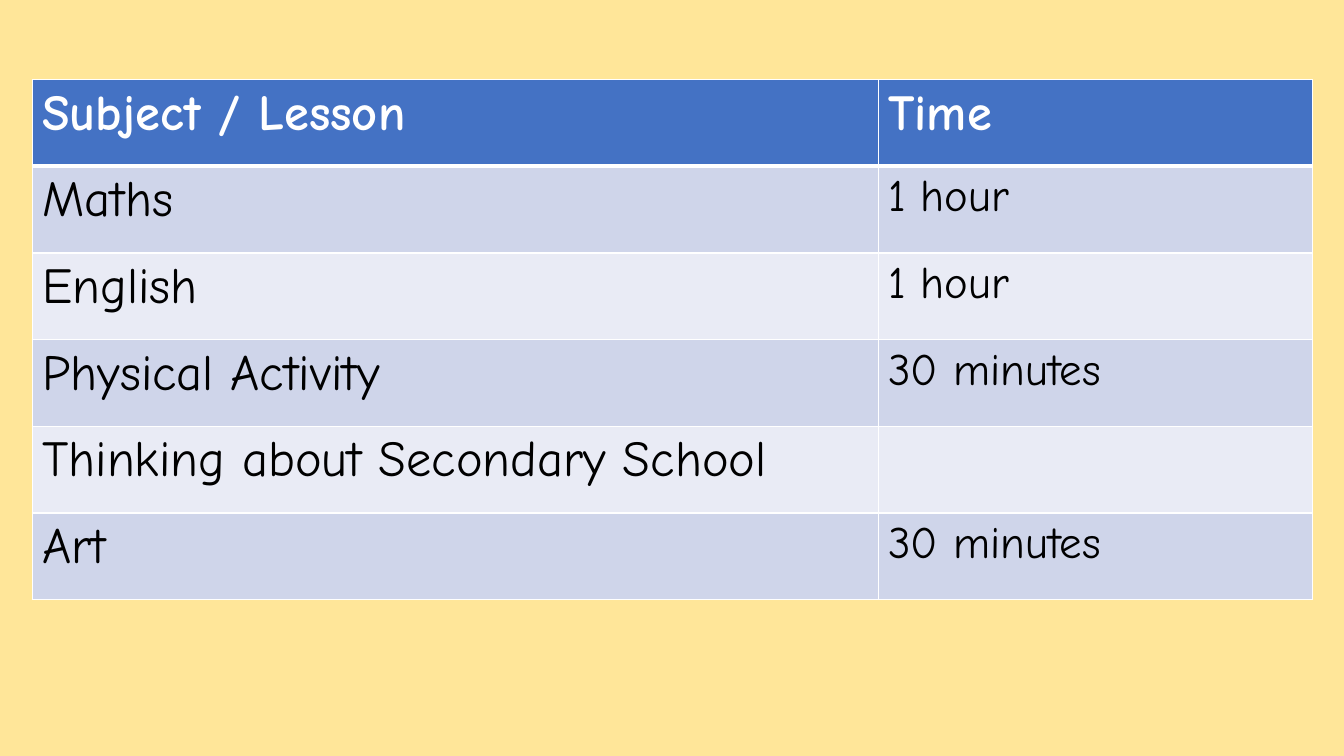
"""Build a slide with a timetable of school subjects and lesson times."""
import dataclasses

import lxml.etree
import pptx
import pptx.dml.color
import pptx.oxml.ns
import pptx.table
import pptx.util

Inches = pptx.util.Inches
COLOURS = {
    "page": "FFE699",
    "header": "4472C4",
    "odd": "CFD5EA",
    "even": "E9EBF5",
    "border": "FFFFFF",
    "header_text": "FFFFFF",
    "body_text": "000000",
}
FONT = "Comic Neue"
COLUMN_WIDTHS = (8.39, 4.31)
ROW_HEIGHT = 0.86


@dataclasses.dataclass(frozen=True)
class Lesson:
    subject: str
    time: str


@dataclasses.dataclass(frozen=True)
class RowStyle:
    fill: str
    text: str
    bold: bool
    sizes: tuple[int, int]
    top: float
    bottom: float


HEADING = Lesson("Subject / Lesson", "Time")
LESSONS = [
    Lesson("Maths", "1 hour"),
    Lesson("English", "1 hour"),
    Lesson("Physical Activity", "30 minutes"),
    Lesson("Thinking about Secondary School", ""),
    Lesson("Art", "30 minutes"),
]


def colour(name: str) -> pptx.dml.color.RGBColor:
    """Return the named colour."""
    return pptx.dml.color.RGBColor.from_string(COLOURS[name])


def row_style(row: int) -> RowStyle:
    """Return the look of a row, counting the header as row zero."""
    if row == 0:
        return RowStyle("header", "header_text", True, (36, 36), 1, 3)
    band = "odd" if row % 2 else "even"
    return RowStyle(band, "body_text", False, (36, 32), 3 if row == 1 else 1, 1)


def draw_borders(cell: pptx.table._Cell, top: float, bottom: float) -> None:
    """Draw the four borders of a cell with widths in points."""
    properties = cell._tc.get_or_add_tcPr()
    widths = {"lnL": 1, "lnR": 1, "lnT": top, "lnB": bottom}
    for position, (tag, width) in enumerate(widths.items()):
        line = lxml.etree.Element(pptx.oxml.ns.qn(f"a:{tag}"), w=str(pptx.util.Pt(width)))
        fill = lxml.etree.SubElement(line, pptx.oxml.ns.qn("a:solidFill"))
        lxml.etree.SubElement(fill, pptx.oxml.ns.qn("a:srgbClr"), val=COLOURS["border"])
        properties.insert(position, line)


def fill_cell(cell: pptx.table._Cell, text: str, size: int, style: RowStyle) -> None:
    """Write and format one cell."""
    cell.fill.solid()
    cell.fill.fore_color.rgb = colour(style.fill)
    draw_borders(cell, style.top, style.bottom)
    if not text:
        return
    cell.text = text
    font = cell.text_frame.paragraphs[0].font
    font.name = FONT
    font.size = pptx.util.Pt(size)
    font.bold = style.bold
    font.color.rgb = colour(style.text)


def main() -> None:
    """Build and save the deck."""
    deck = pptx.Presentation()
    deck.slide_width, deck.slide_height = Inches(13.33), Inches(7.5)
    page = deck.slides.add_slide(deck.slide_layouts.get_by_name("Blank"))
    page.background.fill.solid()
    page.background.fill.fore_color.rgb = colour("page")

    lessons = [HEADING, *LESSONS]
    timetable = page.shapes.add_table(
        len(lessons), len(COLUMN_WIDTHS), Inches(0.32), Inches(0.79),
        Inches(sum(COLUMN_WIDTHS)), Inches(ROW_HEIGHT * len(lessons)),
    ).table
    for column, width in zip(timetable.columns, COLUMN_WIDTHS):
        column.width = Inches(width)
    for row, lesson in enumerate(lessons):
        timetable.rows[row].height = Inches(ROW_HEIGHT)
        style = row_style(row)
        for column, text in enumerate((lesson.subject, lesson.time)):
            fill_cell(timetable.cell(row, column), text, style.sizes[column], style)
    deck.save("out.pptx")


if __name__ == "__main__":
    main()
